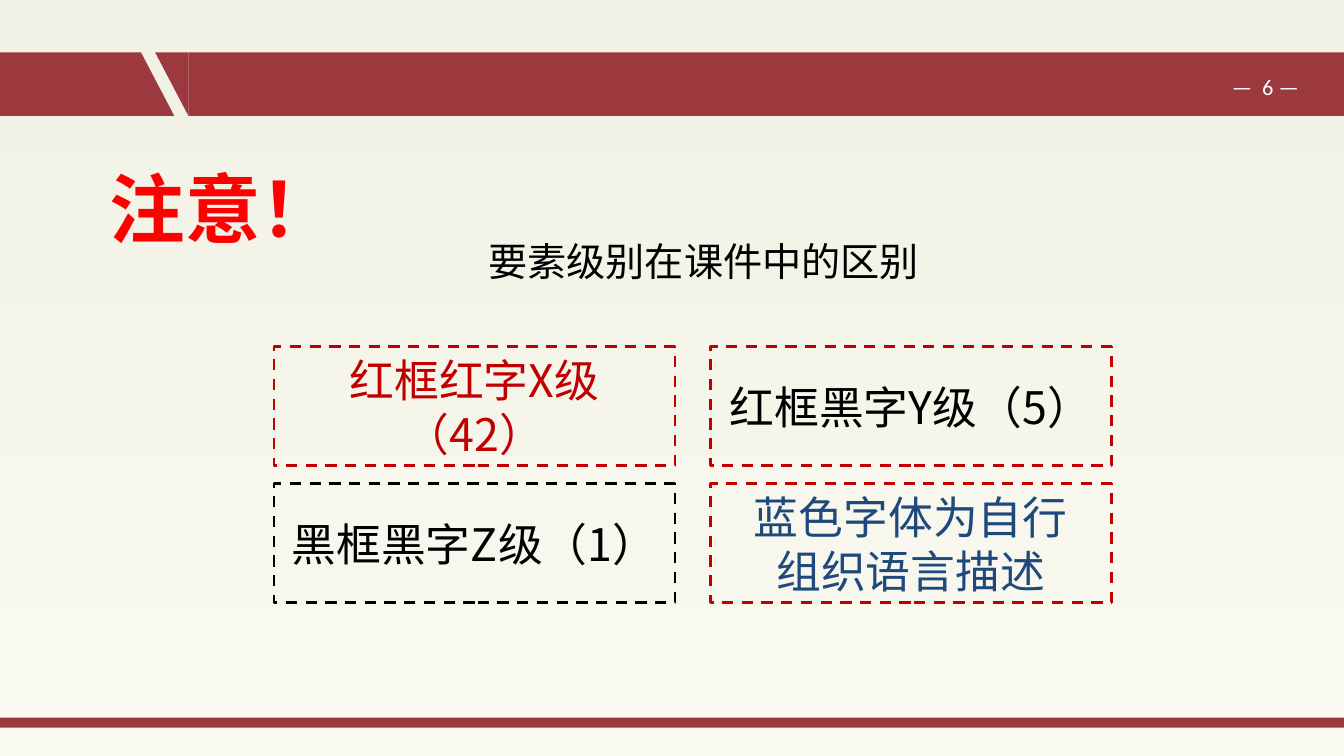
"""Build the slide that explains how element levels are marked in the courseware."""
import pptx
import pptx.util
import pptx.dml.color
import pptx.enum.dml
import pptx.enum.shapes
import pptx.enum.text
import lxml.etree

Inches, Pt = pptx.util.Inches, pptx.util.Pt
RGBColor = pptx.dml.color.RGBColor
SHAPE = pptx.enum.shapes.MSO_SHAPE
ANCHOR = pptx.enum.text.MSO_ANCHOR
ALIGN = pptx.enum.text.PP_ALIGN

CREAM_TOP = RGBColor(0xF1, 0xF1, 0xE5)
CREAM_BOTTOM = RGBColor(0xF9, 0xF9, 0xEF)
MAROON = RGBColor(0x9C, 0x39, 0x3E)
BRIGHT_RED = RGBColor(0xFF, 0, 0)
RED = RGBColor(0xC0, 0, 0)
BLACK = RGBColor(0, 0, 0)
BLUE = RGBColor(0x1F, 0x49, 0x7D)
WHITE = RGBColor(0xFF, 0xFF, 0xFF)
CJK_FONT = "Noto Sans CJK SC"
WIDTH, HEIGHT = 13.34, 7.5

WARNING = "注意！"
SUBTITLE = "要素级别在课件中的区别"
PAGE_NUMBER = "—  6 —"
LEVELS = [
    (["红框红字X级（42）"], RED, RED),
    (["红框黑字Y级（5）"], RED, BLACK),
    (["黑框黑字Z级（1）"], BLACK, BLACK),
    (["蓝色字体为自行", "组织语言描述"], RED, BLUE),
]
BAND_TOP, BAND_H = 0.52, 0.63
BANDS = [
    (SHAPE.RECTANGLE, (0, 7.12, WIDTH, 0.1), 0),
    (SHAPE.RECTANGLE, (0, BAND_TOP, 1.4, BAND_H), 0),
    (SHAPE.RECTANGLE, (1.87, BAND_TOP, WIDTH - 1.87, BAND_H), 0),
    (SHAPE.RIGHT_TRIANGLE, (1.4, BAND_TOP, 0.33, BAND_H), 0),
    (SHAPE.RIGHT_TRIANGLE, (1.54, BAND_TOP, 0.33, BAND_H), 180),
]
GRID_LEFT, GRID_TOP, BOX_W, BOX_H = 2.72, 3.44, 3.98, 1.18
COL_STEP, ROW_STEP = 4.33, 1.36


def add_shape(slide, kind, box):
    sp = slide.shapes.add_shape(kind, *map(Inches, box))
    sp.shadow.inherit = False
    sp.line.fill.background()
    return sp


def write(sp, lines, size, color, font=CJK_FONT, align=ALIGN.CENTER,
          anchor=ANCHOR.MIDDLE, bold=False, wrap=True):
    tf = sp.text_frame
    tf.word_wrap = wrap
    tf.vertical_anchor = anchor
    tf.text = "\n".join(lines)
    for p in tf.paragraphs:
        p.alignment = align
        p.font.size, p.font.bold, p.font.name = Pt(size), bold, font
        p.font.color.rgb = color
        latin = p._p.pPr.find(".//" + pptx.oxml.ns.qn("a:latin"))
        ea = lxml.etree.Element(pptx.oxml.ns.qn("a:ea"), typeface=font)
        latin.addnext(ea)


def main():
    prs = pptx.Presentation()
    prs.slide_width, prs.slide_height = Inches(WIDTH), Inches(HEIGHT)
    slide = prs.slides.add_slide(prs.slide_layouts[6])

    backdrop = add_shape(slide, SHAPE.RECTANGLE, (0, 0, WIDTH, HEIGHT))
    backdrop.fill.gradient()
    backdrop.fill.gradient_angle = 270
    for stop, color in zip(backdrop.fill.gradient_stops, (CREAM_TOP, CREAM_BOTTOM)):
        stop.color.rgb = color

    for kind, box, rotation in BANDS:
        sp = add_shape(slide, kind, box)
        sp.rotation = rotation
        sp.fill.solid()
        sp.fill.fore_color.rgb = MAROON

    page = slide.shapes.add_textbox(*map(Inches, (12.13, 0.68, 1.07, 0.37)))
    write(page, [PAGE_NUMBER], 16, WHITE, "Calibri", ALIGN.LEFT, ANCHOR.TOP, wrap=False)
    warning = slide.shapes.add_textbox(*map(Inches, (0.99, 1.56, 2.4, 1.01)))
    write(warning, [WARNING], 54, BRIGHT_RED, align=ALIGN.LEFT, anchor=ANCHOR.TOP, bold=True)
    subtitle = slide.shapes.add_textbox(*map(Inches, (4.02, 2.19, 5.93, 0.79)))
    write(subtitle, [SUBTITLE], 28, BLACK)

    for i, (lines, frame_color, text_color) in enumerate(LEVELS):
        row, col = divmod(i, 2)
        sp = add_shape(slide, SHAPE.RECTANGLE, (
            GRID_LEFT + col * COL_STEP, GRID_TOP + row * ROW_STEP, BOX_W, BOX_H))
        sp.fill.background()
        sp.line.color.rgb = frame_color
        sp.line.width = Pt(2)
        sp.line.dash_style = pptx.enum.dml.MSO_LINE.DASH
        write(sp, lines, 32, text_color)

    prs.save("out.pptx")


if __name__ == "__main__":
    main()
